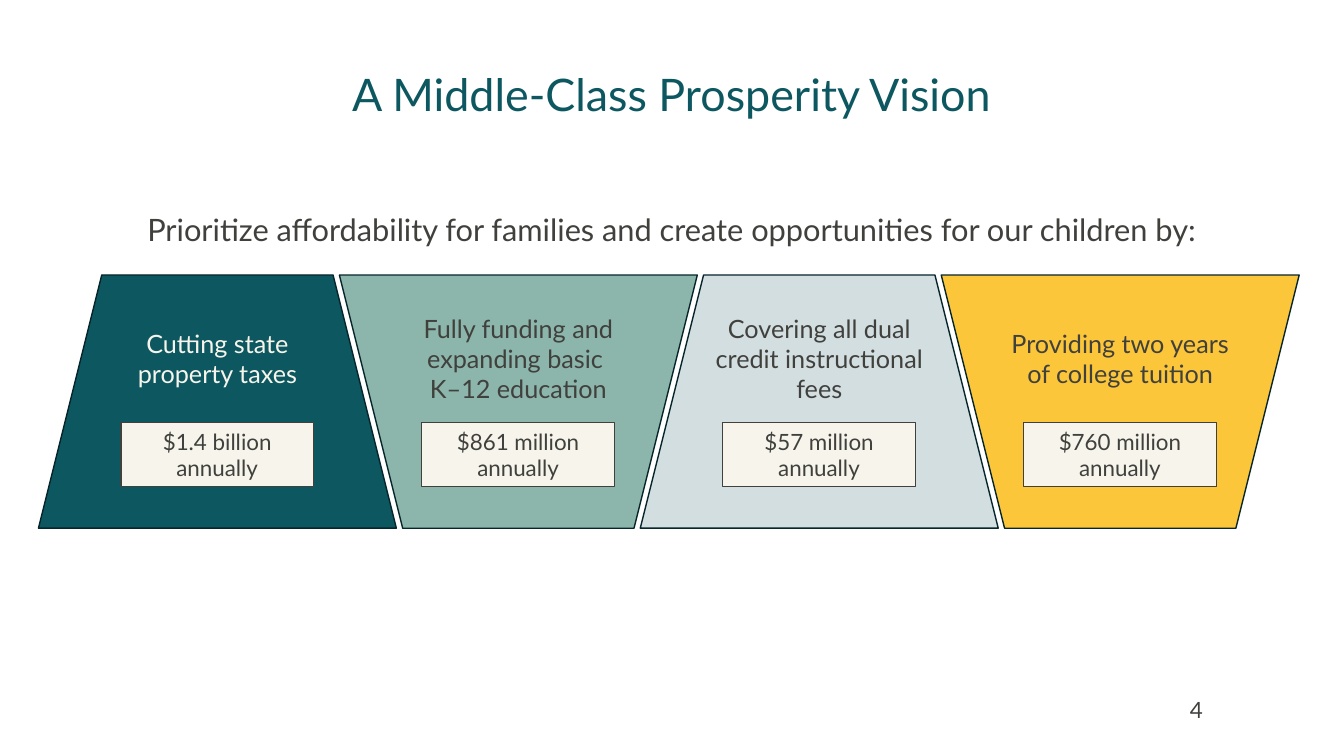
import pptx
import pptx.util
import pptx.dml.color
import pptx.enum.shapes
import pptx.enum.text

Cm = pptx.util.Cm
Pt = pptx.util.Pt
SHAPE = pptx.enum.shapes.MSO_SHAPE
ALIGN = pptx.enum.text.PP_ALIGN

TEAL, INK, CREAM, EDGE = "0D5761", "40403D", "F7F5EB", "06262B"

# fill, text colour, label lines, label width, amount
CARDS = [
    (TEAL, CREAM, ["Cutting state property taxes"], 4.85, "$1.4 billion"),
    ("8CB5AB", INK, ["Fully funding and expanding basic ", "K–12 education"],
     6.12, "$861 million"),
    ("D3DEE1", INK, ["Covering all dual credit instructional fees"],
     6.02, "$57 million"),
    ("FBC639", INK, ["Providing two years of college tuition"],
     6.58, "$760 million"),
]


def rgb(code):
    return pptx.dml.color.RGBColor.from_string(code)


def write(shape, lines, size, color, align=ALIGN.CENTER, space=None):
    """Fill a shape with one paragraph per line, centred in height."""
    frame = shape.text_frame
    frame.word_wrap = True
    frame.vertical_anchor = pptx.enum.text.MSO_ANCHOR.MIDDLE
    for i, line in enumerate(lines):
        para = frame.add_paragraph() if i else frame.paragraphs[0]
        para.alignment = align
        para.line_spacing = space
        run = para.add_run()
        run.text = line
        run.font.name = "Lato"
        run.font.size = Pt(size)
        run.font.color.rgb = rgb(color)


def add_text(slide, box, lines, size, color, **style):
    area = slide.shapes.add_textbox(*map(Cm, box))
    write(area, lines, size, color, **style)


def add_shape(slide, kind, box, fill, line, width):
    shape = slide.shapes.add_shape(kind, *map(Cm, box))
    shape.shadow.inherit = False
    shape.fill.solid()
    shape.fill.fore_color.rgb = rgb(fill)
    shape.line.color.rgb = rgb(line)
    shape.line.width = Pt(width)
    return shape


def add_card(slide, box, card, turned):
    """Trapezoid with a label above a boxed yearly amount."""
    left, top, width, height = box
    fill, color, label, span, amount = card
    mid = left + width / 2
    panel = add_shape(slide, SHAPE.TRAPEZOID, box, fill, EDGE, 1)
    panel.rotation = 180 if turned else 0
    add_text(slide, (mid - span / 2, top + 0.82, span, 2.57),
             label, 18, color)
    tag = add_shape(slide, SHAPE.RECTANGLE,
                    (mid - 2.43, top + 3.71, 4.85, 1.63), CREAM, INK, 0.75)
    write(tag, [amount, "annually"], 16, INK)


def add_cards(slide, box):
    """Row of equal cards, every second one upside down."""
    left, top, width, height = box
    wide = 9.02
    step = (width - wide) / (len(CARDS) - 1)
    for i, card in enumerate(CARDS):
        add_card(slide, (left + i * step, top, wide, height), card, i % 2)


def add_heads(slide, box):
    """Title with the lead-in sentence below it."""
    left, top, width, height = box
    row = 1.88
    add_text(slide, (left, top, width, row),
             ["A Middle-Class Prosperity Vision"], 32, TEAL, space=0.9)
    add_text(slide, (left, top + height - row, width, row),
             ["Prioritize affordability for families and create "
              "opportunities for our children by:"], 22, INK, space=0.9)


def main():
    deck = pptx.Presentation()
    deck.slide_width, deck.slide_height = Cm(33.87), Cm(19.05)
    slide = deck.slides.add_slide(deck.slide_layouts[6])
    add_heads(slide, (1.24, 1.5, 31.37, 5.28))
    add_cards(slide, (0.97, 6.93, 31.77, 6.38))
    add_text(slide, (29.74, 17.37, 1.78, 1.02), ["4"], 16, INK,
             align=ALIGN.LEFT)
    deck.save("out.pptx")


if __name__ == "__main__":
    main()
